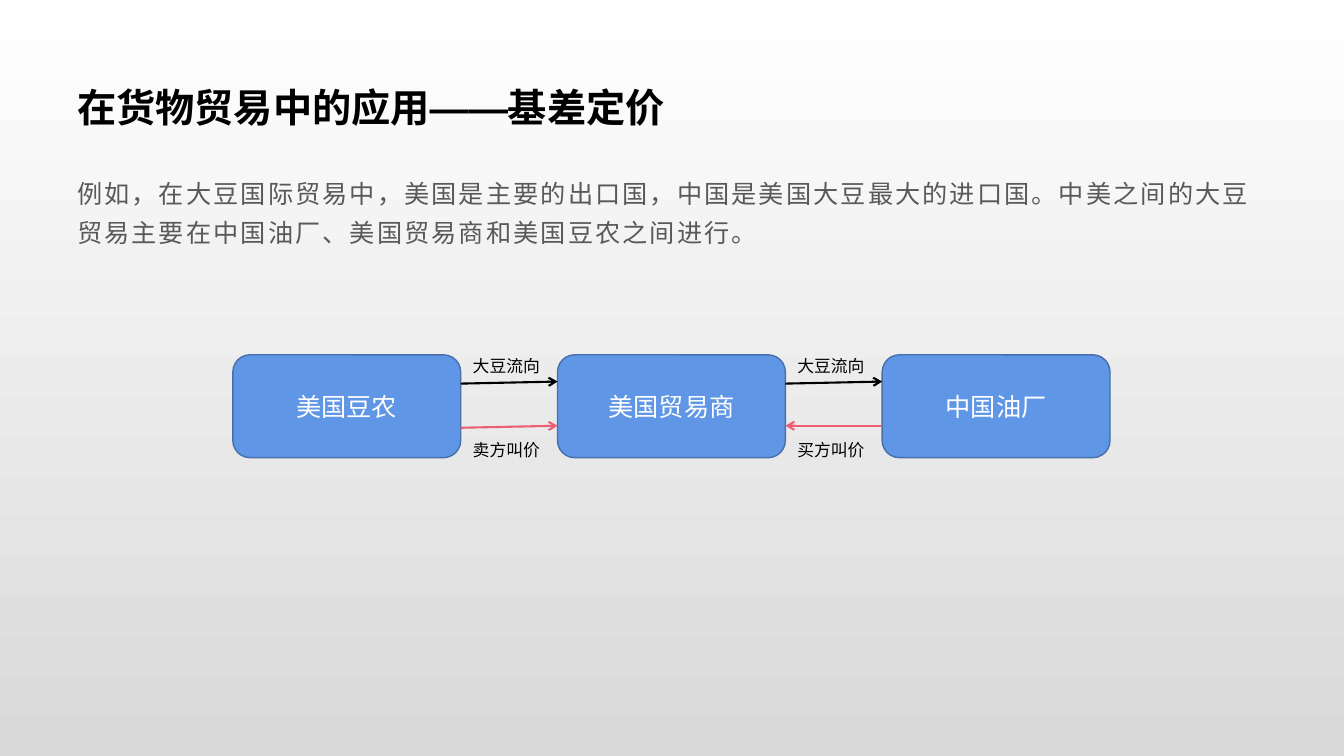
from lxml import etree
from pptx import Presentation
from pptx import util as u
from pptx.dml.color import RGBColor
from pptx.enum import shapes, text
from pptx.oxml.ns import qn

WIDTH, HEIGHT = 13.33, 7.5
FONT = "Arial"
COLOURS = {
    "top": "FFFFFF", "bottom": "D9D9D9", "title": "000000", "body": "595959",
    "party": "6096E6", "outline": "476FAA", "party_text": "FFFFFF",
    "flow": "000000", "price": "EC5F74",
}
PARTIES = ["美国豆农", "美国贸易商", "中国油厂"]
PRICES = [("卖方叫价", False), ("买方叫价", True)]
PARTY_WIDTH, PARTY_HEIGHT = 2.26, 1.02


def colour(name):
    return RGBColor.from_string(COLOURS[name])


def write(shape, words, size, colour_name, bold=False, spacing=None,
          align=text.PP_ALIGN.LEFT, anchor=text.MSO_ANCHOR.TOP, wrap=True):
    frame = shape.text_frame
    frame.text = words
    frame.word_wrap = wrap
    frame.auto_size = text.MSO_AUTO_SIZE.NONE
    frame.vertical_anchor = anchor
    paragraph = frame.paragraphs[0]
    paragraph.alignment = align
    run = paragraph.runs[0]
    run.font.size = u.Pt(size)
    run.font.name = FONT
    run.font.bold = bold
    run.font.color.rgb = colour(colour_name)
    properties = run._r.get_or_add_rPr()
    properties.set("lang", "zh-CN")
    if spacing:
        properties.set("spc", str(int(spacing * 100)))
    latin = properties.find(qn("a:latin"))
    east_asian = etree.Element(qn("a:ea"), typeface=FONT)
    latin.addnext(east_asian)
    return paragraph


def add_text(slide, box, words, size, colour_name, **style):
    shape = slide.shapes.add_textbox(*map(u.Inches, box))
    return write(shape, words, size, colour_name, **style)


def paint_background(slide):
    fill = slide.background.fill
    fill.gradient()
    fill.gradient_angle = 270
    for stop, position, name in zip(fill.gradient_stops, (0, 1), ("top", "bottom")):
        stop.position = position
        stop.color.rgb = colour(name)


def add_heading(slide, box):
    title = slide.shapes.title
    title.left, title.top, title.width, title.height = map(u.Inches, box)
    write(title, "在货物贸易中的应用——基差定价", 28, "title", bold=True,
          anchor=text.MSO_ANCHOR.MIDDLE)


def add_explanation(slide, box):
    paragraph = add_text(
        slide, box,
        "例如，在大豆国际贸易中，美国是主要的出口国，中国是美国大豆最大的进口国。"
        "中美之间的大豆贸易主要在中国油厂、美国贸易商和美国豆农之间进行。",
        18, "body", spacing=1.5)
    paragraph.line_spacing = 1.3
    paragraph.space_after = u.Pt(10)


def add_party(slide, box, name):
    party = slide.shapes.add_shape(
        shapes.MSO_SHAPE.ROUNDED_RECTANGLE, *map(u.Inches, box))
    party.shadow.inherit = False
    party.fill.solid()
    party.fill.fore_color.rgb = colour("party")
    party.line.color.rgb = colour("outline")
    party.line.width = u.Pt(1)
    write(party, name, 18, "party_text", align=text.PP_ALIGN.CENTER,
          anchor=text.MSO_ANCHOR.MIDDLE)


def add_arrow(slide, start, end, colour_name):
    arrow = slide.shapes.add_connector(
        shapes.MSO_CONNECTOR.STRAIGHT, *map(u.Inches, start + end))
    arrow.line.color.rgb = colour(colour_name)
    arrow.line.width = u.Pt(1.5)
    etree.SubElement(arrow.line._get_or_add_ln(), qn("a:tailEnd"), type="arrow")
    etree.SubElement(arrow._element.spPr, qn("a:effectLst"))


def add_exchange(slide, box, price, from_buyer):
    left, top, width, height = box
    right = left + width
    flow_y, price_y = top + 0.28 * height, top + 0.69 * height
    add_arrow(slide, (left, flow_y), (right, flow_y - 0.02), "flow")
    if from_buyer:
        add_arrow(slide, (right, price_y), (left, price_y), "price")
    else:
        add_arrow(slide, (left, price_y + 0.02), (right, price_y), "price")
    for words, label_top in (("大豆流向", top - 0.04), (price, top + 0.79)):
        add_text(slide, (left + 0.02, label_top, 0.89, 0.3), words, 12, "flow",
                 wrap=False)


def add_trade_chain(slide, box):
    left, top, width, height = box
    pitch = (width - PARTY_WIDTH) / (len(PARTIES) - 1)
    for index, name in enumerate(PARTIES):
        add_party(slide, (left + index * pitch, top, PARTY_WIDTH, height), name)
    for index, (price, from_buyer) in enumerate(PRICES):
        gap_left = left + index * pitch + PARTY_WIDTH
        add_exchange(slide, (gap_left, top, pitch - PARTY_WIDTH, height),
                     price, from_buyer)


def main():
    presentation = Presentation()
    presentation.slide_width = u.Inches(WIDTH)
    presentation.slide_height = u.Inches(HEIGHT)
    slide = presentation.slides.add_slide(presentation.slide_layouts[5])
    margin, content_width = 0.05 * WIDTH, 0.9 * WIDTH
    paint_background(slide)
    add_heading(slide, (margin, 0.67, content_width, 0.77))
    add_explanation(slide, (margin, 1.63, content_width, 5.2))
    add_trade_chain(slide, (2.31, 3.52, 8.7, PARTY_HEIGHT))
    presentation.save("out.pptx")


if __name__ == "__main__":
    main()
